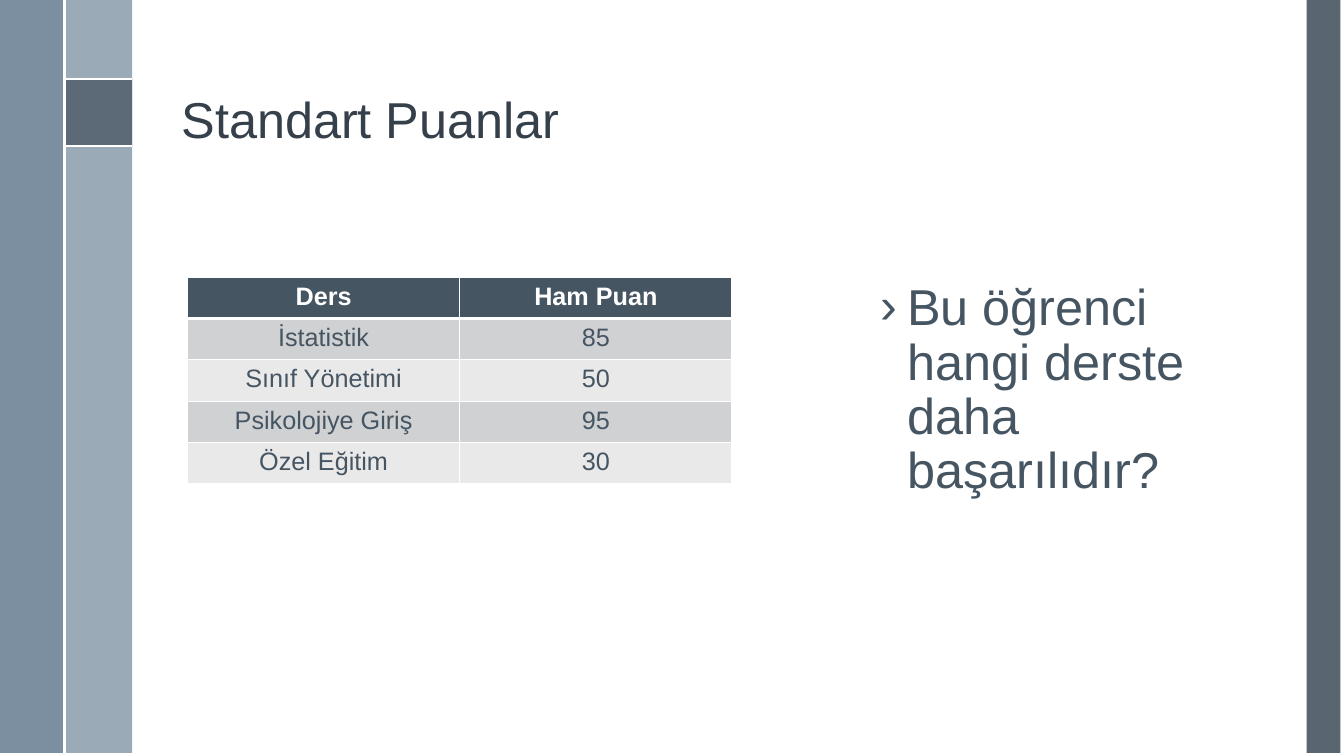
from lxml import etree
from pptx import Presentation
from pptx.dml.color import RGBColor
from pptx.enum.shapes import MSO_CONNECTOR, MSO_SHAPE
from pptx.enum.text import MSO_ANCHOR, MSO_AUTO_SIZE, PP_ALIGN
from pptx.oxml.ns import qn
from pptx.util import Inches, Pt

RECT, STRAIGHT = MSO_SHAPE.RECTANGLE, MSO_CONNECTOR.STRAIGHT
LEFT, CENTER = PP_ALIGN.LEFT, PP_ALIGN.CENTER
BOTTOM, NO_FIT = MSO_ANCHOR.BOTTOM, MSO_AUTO_SIZE.NONE

# Content
TITLE = "Standart Puanlar"
QUESTION = "Bu öğrenci hangi derste daha başarılıdır?"
SCORES = [
    ("Ders", "Ham Puan"),
    ("İstatistik", "85"),
    ("Sınıf Yönetimi", "50"),
    ("Psikolojiye Giriş", "95"),
    ("Özel Eğitim", "30"),
]
COLORS = {
    "white": "FFFFFF", "title": "35404A", "text": "465562",
    "dark": "475562", "middle": "6A8093", "light": "9BAAB7",
    "odd": "CFD1D3", "even": "E9E9EA",
}

# Grid, in inches
W, H = 13.33, 7.5
BAND, BAND_X, TOP = 0.67, 0.64, -0.03
BADGE_Y = 0.78
COL_W, ROW_H = 2.7, 0.41
CONTENT_Y = 2.75
BANDS = [  # left, top, width, height, colour, opacity in percent
    (12.96, TOP, BAND / 2, H, "dark", 90),
    (BAND_X, TOP, BAND, H, "light", 100),
    (BAND_X - BAND, TOP, BAND, H, "middle", 88),
    (BAND_X, BADGE_Y, BAND, BAND, "dark", 75),
]
RULES = [  # from x, from y, to x, to y
    (BAND_X, BADGE_Y, BAND_X + BAND, BADGE_Y),
    (BAND_X, BADGE_Y + BAND, BAND_X + BAND, BADGE_Y + BAND),
    (BAND_X, TOP, BAND_X, TOP + H),
]
PI_OUTLINE = [
    (1.14, 0.95), (0.86, 0.95), (0.82, 0.97), (0.79, 1.01), (0.8, 1.03),
    (0.81, 1.02), (0.83, 0.99), (0.86, 0.98), (0.9, 0.98), (0.89, 1.09),
    (0.87, 1.18), (0.84, 1.24), (0.84, 1.26), (0.86, 1.26), (0.9, 1.19),
    (0.92, 1.08), (0.93, 0.98), (1.02, 0.98), (1.01, 1.19), (1.01, 1.23),
    (1.03, 1.26), (1.07, 1.28), (1.11, 1.26), (1.14, 1.22), (1.15, 1.2),
    (1.14, 1.18), (1.12, 1.19), (1.1, 1.23), (1.07, 1.25), (1.04, 1.24),
    (1.03, 1.19), (1.05, 0.98), (1.14, 0.98), (1.15, 0.97),
]


def rgb(name):
    return RGBColor.from_string(COLORS[name])


def place(sp, *box):
    for name, value in zip(("left", "top", "width", "height"), box):
        setattr(sp, name, Inches(value))


def fill_plain(sp, color, opacity=100):
    sp.shadow.inherit = False
    sp.fill.solid()
    sp.fill.fore_color.rgb = rgb(color)
    sp.line.fill.background()
    if opacity < 100:
        clr = sp.fill._xPr.find(qn("a:solidFill"))[0]
        etree.SubElement(clr, qn("a:alpha"), val=str(opacity * 1000))


def write(tf, text, color, size, align=LEFT, bold=False, **paragraph):
    p = tf.paragraphs[0]
    for name, value in dict(paragraph, alignment=align).items():
        setattr(p, name, value)
    r = p.add_run()
    r.text = text
    font = dict(name="Arial", size=Pt(size), bold=bold)
    for name, value in font.items():
        setattr(r.font, name, value)
    r.font.color.rgb = rgb(color)
    return p


def set_borders(cell, widths):
    tcPr = cell._tc.get_or_add_tcPr()
    for i, (side, width) in enumerate(widths.items()):
        ln = etree.Element(qn("a:" + side), w=str(Pt(width)))
        solid = etree.SubElement(ln, qn("a:solidFill"))
        etree.SubElement(solid, qn("a:srgbClr"), val=COLORS["white"])
        tcPr.insert(i, ln)


prs = Presentation()
prs.slide_width, prs.slide_height = Inches(W), Inches(H)
slide = prs.slides.add_slide(prs.slide_layouts[5])
shapes = slide.shapes

# Side bands and pi badge
for *box, color, opacity in BANDS:
    sp = shapes.add_shape(RECT, *map(Inches, box))
    fill_plain(sp, color, opacity)

pen = shapes.build_freeform(*PI_OUTLINE[0], scale=Inches(1))
pen.add_line_segments(PI_OUTLINE[1:], close=True)
fill_plain(pen.convert_to_shape(), "white")

for ends in RULES:
    rule = shapes.add_connector(STRAIGHT, *map(Inches, ends))
    rule.line.color.rgb = rgb("white")
    rule.line.width = Pt(1.5)
    etree.SubElement(rule._element.spPr, qn("a:effectLst"))

# Title
title = shapes.title
place(title, 1.7, 0.17, 10.7, 1.36)
tf = title.text_frame
for name, value in dict(vertical_anchor=BOTTOM, auto_size=NO_FIT, word_wrap=True).items():
    setattr(tf, name, value)
write(tf, TITLE, "title", 36, line_spacing=0.9)

# Score table
rows, cols = len(SCORES), len(SCORES[0])
frame = shapes.add_table(rows, cols, Inches(1.86), Inches(CONTENT_Y),
                         Inches(cols * COL_W), Inches(rows * ROW_H))
table = frame.table
for col in table.columns:
    col.width = Inches(COL_W)
for i, values in enumerate(SCORES):
    table.rows[i].height = Inches(ROW_H)
    head = i == 0
    back = "text" if head else "odd" if i % 2 else "even"
    for j, value in enumerate(values):
        cell = table.cell(i, j)
        cell.fill.solid()
        cell.fill.fore_color.rgb = rgb(back)
        write(cell.text_frame, value, "white" if head else "text", 18, CENTER, head)
        set_borders(cell, {"lnL": 1, "lnR": 1, "lnT": 3 if i == 1 else 1,
                           "lnB": 3 if head else 1})

# Question with a bullet
box = shapes.add_textbox(*map(Inches, (8.63, CONTENT_Y, 3.81, 4)))
box.text_frame.word_wrap = True
p = write(box.text_frame, QUESTION, "text", 36, line_spacing=0.9, space_before=Pt(14))
pPr = p._p.get_or_add_pPr()
pPr.set("marL", str(Inches(0.27)))
pPr.set("indent", str(-Inches(0.27)))
etree.SubElement(pPr, qn("a:buFont"), typeface="Arial")
etree.SubElement(pPr, qn("a:buChar"), char="›")

prs.save("out.pptx")
